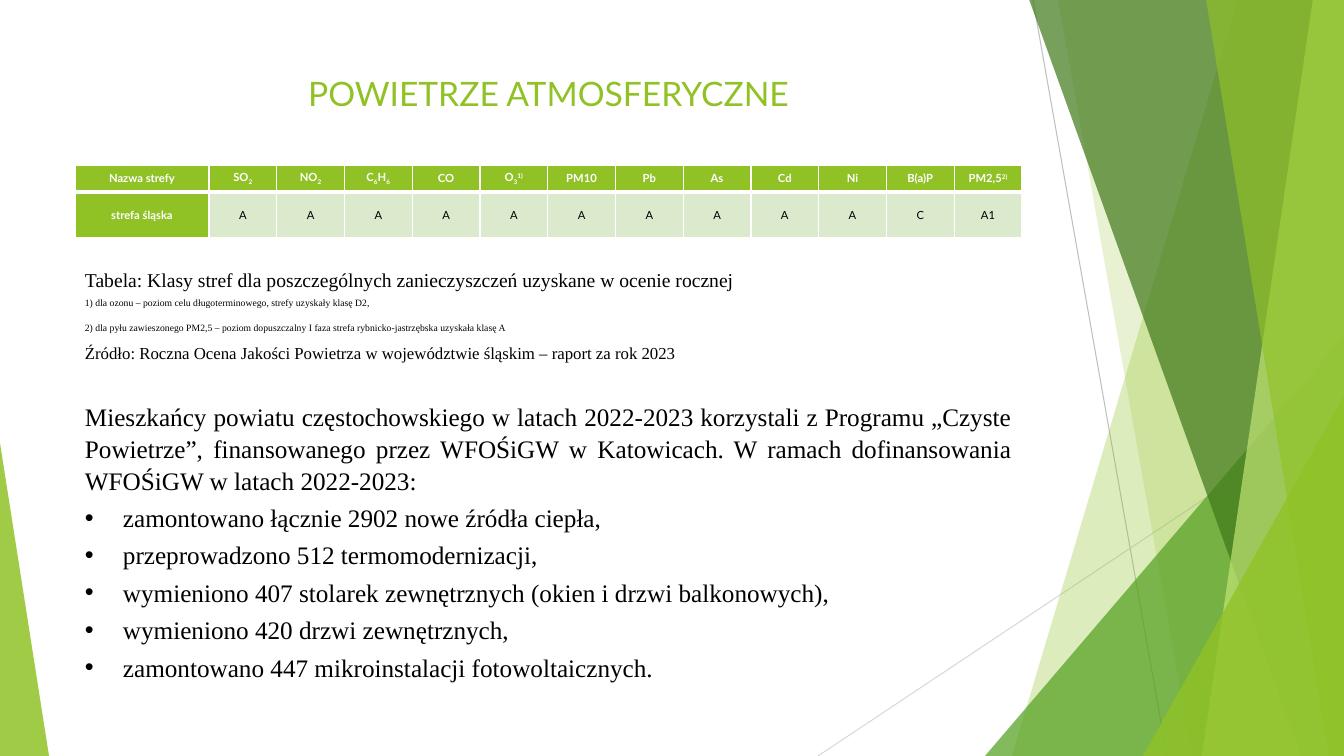
"""Build the slide on air quality classes and the clean air programme."""
from lxml import etree
from pptx import Presentation
from pptx.dml.color import RGBColor
from pptx.enum.shapes import MSO_CONNECTOR, MSO_SHAPE
from pptx.enum.text import MSO_ANCHOR, PP_ALIGN as Align
from pptx.oxml.ns import qn
from pptx.util import Emu, Pt

COLORS = {
    "lime": "90C226", "leaf": "54A021", "forest": "3F7819", "pale": "C0E474",
    "mint": "DBE9CD", "white": "FFFFFF", "black": "000000",
    "gray": "BFBFBF", "light_gray": "D9D9D9",
}
WIDTH, HEIGHT = 1344, 756
SCALE = 12192000 / WIDTH
LEFT, CONTENT_WIDTH = 75, 947
HEADING_FONT, BODY_FONT = "Lato", "Times New Roman"

RAYS = [((1033, 0), (1167, 756), "gray"), ((1344, 406), (818, 756), "light_gray")]
BANDS_BACK = [(1238, 1012, "lime", 30), (1058, 1192, "lime", 20)]
BANDS_FRONT = [(1029, 1301, "forest", 70), (1313, 1202, "pale", 70), (1206, 1329, "lime", 65)]
PEAK_BACK = [(985, 336, 359, 1, "leaf", 72)]
PEAKS_FRONT = [(1143, 396, 201, 1, "lime", 80), (0, 443, 49, 0, "lime", 85)]

TITLE = "POWIETRZE ATMOSFERYCZNE"
SUB, SUPER = -25, 30
POLLUTANTS = [
    [("Nazwa strefy", 0)],
    [("SO", 0), ("2", SUB)],
    [("NO", 0), ("2", SUB)],
    [("C", 0), ("6", SUB), ("H", 0), ("6", SUB)],
    [("CO", 0)],
    [("O", 0), ("3", SUB), ("1)", SUPER)],
    *[[(name, 0)] for name in ("PM10", "Pb", "As", "Cd", "Ni", "B(a)P")],
    [("PM2,5", 0), ("2)", SUPER)],
]
CLASSES = [[(grade, 0)] for grade in ["strefa śląska", *"AAAAAAAAAA", "C", "A1"]]
ZONE_WIDTH, ROW_HEIGHTS = 134, (27, 46)

CAPTION = "Tabela: Klasy stref dla poszczególnych zanieczyszczeń uzyskane w ocenie rocznej"
FOOTNOTES = [
    "1) dla ozonu – poziom celu długoterminowego, strefy uzyskały klasę D2,",
    "2) dla pyłu zawieszonego PM2,5 – poziom dopuszczalny I faza strefa "
    "rybnicko-jastrzębska uzyskała klasę A",
]
SOURCE = "Źródło: Roczna Ocena Jakości Powietrza w województwie śląskim – raport za rok 2023"
PROGRAMME = (
    "Mieszkańcy powiatu częstochowskiego w latach 2022-2023 korzystali z Programu "
    "„Czyste Powietrze”, finansowanego przez WFOŚiGW w Katowicach. "
    "W ramach dofinansowania WFOŚiGW w latach 2022-2023:"
)
RESULTS = [
    "zamontowano łącznie 2902 nowe źródła ciepła,",
    "przeprowadzono 512 termomodernizacji,",
    "wymieniono 407 stolarek zewnętrznych (okien i drzwi balkonowych),",
    "wymieniono 420 drzwi zewnętrznych,",
    "zamontowano 447 mikroinstalacji fotowoltaicznych.",
]
SPACED = {"space_before": Pt(2), "space_after": Pt(2)}
JUSTIFIED = {"alignment": Align.JUSTIFY, **SPACED}
CENTERED = {"alignment": Align.CENTER, **SPACED}


def px(length):
    return Emu(round(length * SCALE))


def rgb(color):
    return RGBColor.from_string(COLORS[color])


def paint(shape, color, opacity):
    shape.shadow.inherit = False
    shape.line.fill.background()
    shape.fill.solid()
    shape.fill.fore_color.rgb = rgb(color)
    tint = shape.fill._xPr.find(".//" + qn("a:srgbClr"))
    etree.SubElement(tint, qn("a:alpha")).set("val", str(opacity * 1000))


def add_rays(shapes):
    for start, end, color in RAYS:
        ray = shapes.add_connector(MSO_CONNECTOR.STRAIGHT, *map(px, start + end))
        ray.line.color.rgb = rgb(color)
        ray.line.width = Pt(0.75)
        etree.SubElement(ray._element.spPr, qn("a:effectLst"))


def add_bands(shapes, bands):
    for top_x, bottom_x, color, opacity in bands:
        outline = shapes.build_freeform(px(top_x), px(-1), scale=1.0)
        corners = [(WIDTH, -1), (WIDTH, HEIGHT), (bottom_x, HEIGHT)]
        outline.add_line_segments([(px(x), px(y)) for x, y in corners], close=True)
        paint(outline.convert_to_shape(), color, opacity)


def add_peaks(shapes, peaks):
    for left, top, width, apex, color, opacity in peaks:
        peak = shapes.add_shape(
            MSO_SHAPE.ISOSCELES_TRIANGLE, px(left), px(top), px(width), px(HEIGHT - top))
        peak.adjustments[0] = apex
        paint(peak, color, opacity)


def write(paragraph, runs, layout, font, size, color="black", bold=False):
    for attribute, value in layout.items():
        setattr(paragraph, attribute, value)
    for words, baseline in runs:
        run = paragraph.add_run()
        run.text = words
        look = {"name": font, "size": Pt(size), "bold": bold}
        for attribute, value in look.items():
            setattr(run.font, attribute, value)
        run.font.color.rgb = rgb(color)
        if baseline:
            run._r.get_or_add_rPr().set("baseline", str(baseline * 1000))


def add_text(shapes, top, height, lines):
    frame = shapes.add_textbox(px(LEFT), px(top), px(CONTENT_WIDTH), px(height)).text_frame
    frame.word_wrap = True
    for number, line in enumerate(lines):
        paragraph = frame.add_paragraph() if number else frame.paragraphs[0]
        write(paragraph, *line)
    return frame


def add_bullet(paragraph):
    properties = paragraph._p.get_or_add_pPr()
    properties.set("marL", str(px(38)))
    properties.set("indent", str(-px(38)))
    etree.SubElement(properties, qn("a:buFont")).set("typeface", "Arial")
    etree.SubElement(properties, qn("a:buChar")).set("char", "•")


def add_borders(cell, bottom):
    properties = cell._tc.get_or_add_tcPr()
    for place, (side, weight) in enumerate([("L", 1), ("R", 1), ("T", 1), ("B", bottom)]):
        edge = etree.Element(qn(f"a:ln{side}"), w=str(Pt(weight)))
        fill = etree.SubElement(edge, qn("a:solidFill"))
        etree.SubElement(fill, qn("a:srgbClr")).set("val", COLORS["white"])
        properties.insert(place, edge)


def add_classes(shapes):
    count = len(POLLUTANTS)
    table = shapes.add_table(
        2, count, px(LEFT), px(165), px(CONTENT_WIDTH), px(sum(ROW_HEIGHTS))).table
    grade_width = (CONTENT_WIDTH - ZONE_WIDTH) / (count - 1)
    for number, column in enumerate(table.columns):
        column.width = px(grade_width if number else ZONE_WIDTH)
    for row, entries in enumerate([POLLUTANTS, CLASSES]):
        table.rows[row].height = px(ROW_HEIGHTS[row])
        for column, runs in enumerate(entries):
            cell = table.cell(row, column)
            heading = row == 0 or column == 0
            layout = {"vertical_anchor": MSO_ANCHOR.MIDDLE, "margin_left": px(5),
                      "margin_right": px(5), "margin_top": 0, "margin_bottom": 0}
            for attribute, value in layout.items():
                setattr(cell, attribute, value)
            cell.fill.solid()
            cell.fill.fore_color.rgb = rgb("lime" if heading else "mint")
            add_borders(cell, bottom=1 if row else 3)
            write(cell.text_frame.paragraphs[0], runs, CENTERED, HEADING_FONT, 8,
                  "white" if heading else "black", heading)


def main():
    deck = Presentation()
    deck.slide_width, deck.slide_height = px(WIDTH), px(HEIGHT)
    shapes = deck.slides.add_slide(deck.slide_layouts[6]).shapes
    add_rays(shapes)
    add_bands(shapes, BANDS_BACK)
    add_peaks(shapes, PEAK_BACK)
    add_bands(shapes, BANDS_FRONT)
    add_peaks(shapes, PEAKS_FRONT)
    add_text(shapes, 68, 73, [
        ([(TITLE, 0)], {"alignment": Align.CENTER}, HEADING_FONT, 24, "lime")])
    add_classes(shapes)
    add_text(shapes, 263, 110, [
        ([(CAPTION, 0)], {}, BODY_FONT, 14),
        *[([(note, SUPER)], JUSTIFIED, BODY_FONT, 12) for note in FOOTNOTES],
        ([(SOURCE, 0)], {}, BODY_FONT, 12)])
    programme = add_text(shapes, 395, 322, [
        ([(line, 0)], {**JUSTIFIED, "line_spacing": 1.05}, BODY_FONT, 18)
        for line in [PROGRAMME, *RESULTS]])
    for result in programme.paragraphs[1:]:
        add_bullet(result)
    deck.save("out.pptx")


if __name__ == "__main__":
    main()
